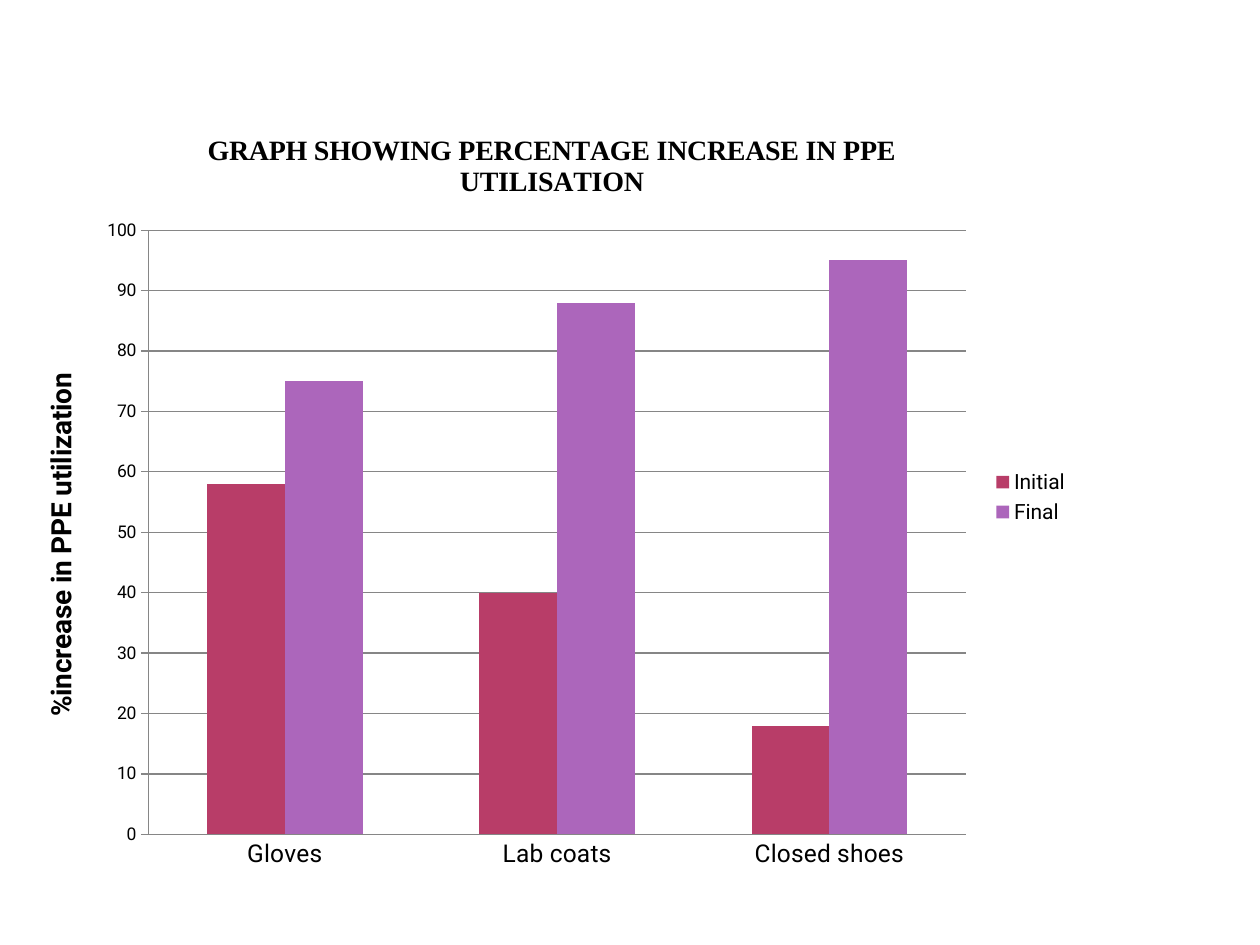
"""Build a slide with a column chart of the rise in PPE utilisation."""
from lxml import etree
from pptx import Presentation
from pptx.chart.data import CategoryChartData
from pptx.dml.color import RGBColor
from pptx.enum.chart import XL_CHART_TYPE, XL_LEGEND_POSITION, XL_TICK_MARK
from pptx.oxml.ns import qn
from pptx.util import Cm, Pt

COLUMNS = XL_CHART_TYPE.COLUMN_CLUSTERED
RIGHT = XL_LEGEND_POSITION.RIGHT
NO_TICK, CROSS_TICK = XL_TICK_MARK.NONE, XL_TICK_MARK.CROSS

BLACK = RGBColor(0x00, 0x00, 0x00)
GREY = RGBColor(0x86, 0x86, 0x86)
CRIMSON = RGBColor(0xB8, 0x3D, 0x68)
PURPLE = RGBColor(0xAC, 0x66, 0xBB)

HEADING = "GRAPH SHOWING PERCENTAGE INCREASE IN PPE UTILISATION"
SCALE_LABEL = "%increase in PPE utilization"
EQUIPMENT = ["Gloves", "Lab coats", "Closed shoes"]
ROUNDS = [
    ("Initial", [58, 40, 18], CRIMSON),
    ("Final", [75, 88, 95], PURPLE),
]
PLOT_AREA = {"x": 0.12, "y": 0.16, "w": 0.77, "h": 0.77}


def style_font(font, size, name="Roboto", bold=False):
    font.name = name
    font.size = Pt(size)
    font.bold = bold
    font.color.rgb = BLACK


def write_title(owner, text, **style):
    paragraph = owner.text_frame.paragraphs[0]
    run = paragraph.add_run()
    run.text = text
    style_font(run.font, **style)


def place_plot(chart, fractions):
    plot_area = chart.element.find(".//" + qn("c:plotArea"))
    layout = etree.Element(qn("c:layout"))
    manual = etree.SubElement(layout, qn("c:manualLayout"))
    settings = {"layoutTarget": "inner", "xMode": "edge", "yMode": "edge", **fractions}
    for tag, value in settings.items():
        etree.SubElement(manual, qn("c:" + tag)).set("val", str(value))
    plot_area.insert(0, layout)


def add_utilisation_chart(slide):
    usage = CategoryChartData()
    usage.categories = EQUIPMENT
    for label, percentages, _ in ROUNDS:
        usage.add_series(label, percentages)
    chart = slide.shapes.add_chart(
        COLUMNS, Cm(0.43), Cm(2.11), Cm(21.39), Cm(15.82), usage
    ).chart
    style_font(chart.font, 10)
    chart.has_title = True
    write_title(chart.chart_title, HEADING, size=16, name="Times New Roman", bold=True)
    chart.chart_title.include_in_layout = False

    chart.has_legend = True
    chart.legend.position = RIGHT
    chart.legend.include_in_layout = False
    style_font(chart.legend.font, 12)

    columns = chart.plots[0]
    columns.gap_width = 150
    columns.overlap = 0
    columns.vary_by_categories = False
    for series, (_, _, color) in zip(columns.series, ROUNDS):
        series.format.fill.solid()
        series.format.fill.fore_color.rgb = color

    equipment_axis, percent_axis = chart.category_axis, chart.value_axis
    equipment_axis.major_tick_mark = NO_TICK
    style_font(equipment_axis.tick_labels.font, 14)
    percent_axis.minimum_scale = 0
    percent_axis.maximum_scale = 100
    percent_axis.major_unit = 10
    percent_axis.major_tick_mark = CROSS_TICK
    percent_axis.has_major_gridlines = True
    percent_axis.has_title = True
    write_title(percent_axis.axis_title, SCALE_LABEL, size=16, bold=True)
    style_font(percent_axis.tick_labels.font, 10)
    for ruled in (equipment_axis, percent_axis, percent_axis.major_gridlines):
        ruled.format.line.color.rgb = GREY
        ruled.format.line.width = Pt(0.75)
    place_plot(chart, PLOT_AREA)


def main():
    deck = Presentation()
    deck.slide_width, deck.slide_height = Cm(25.4), Cm(19.05)
    add_utilisation_chart(deck.slides.add_slide(deck.slide_layouts[6]))
    deck.save("out.pptx")


if __name__ == "__main__":
    main()
